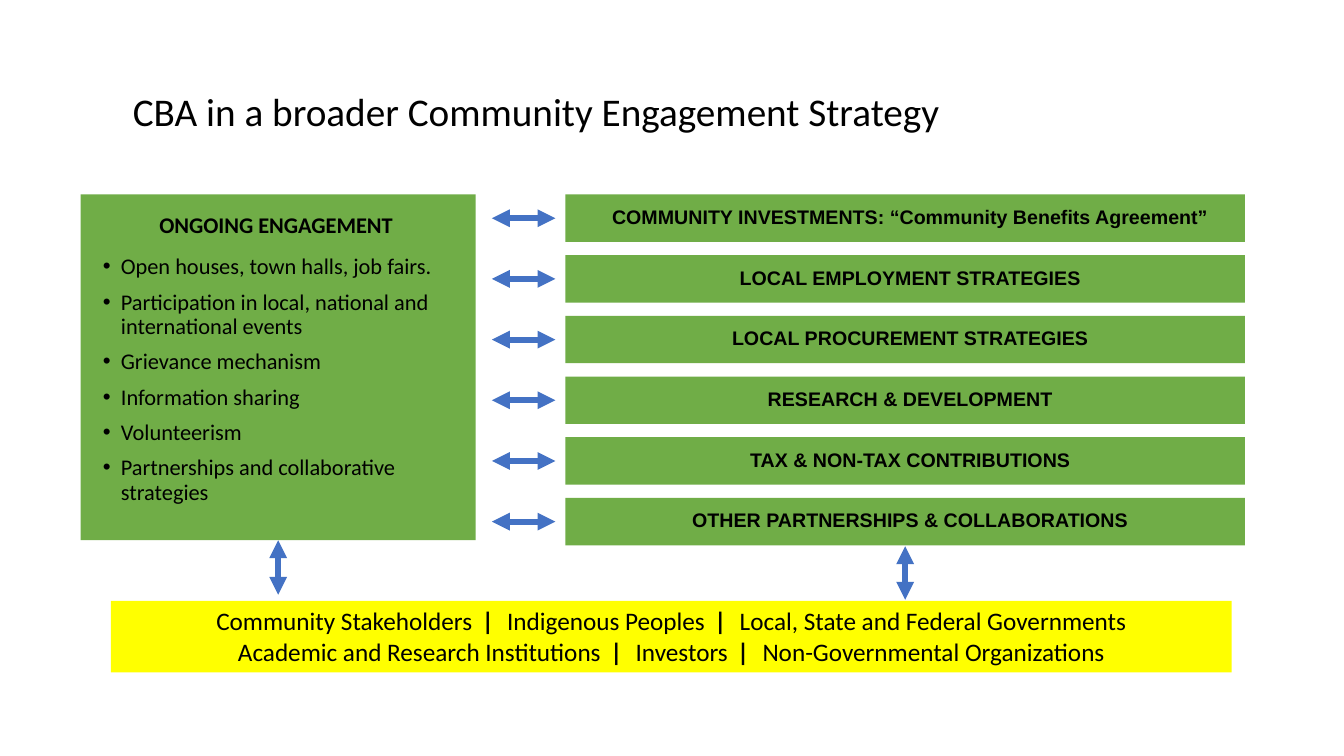
import pptx
import pptx.util
import pptx.dml.color
import pptx.enum.shapes
import pptx.enum.text
import pptx.oxml.ns
from lxml import etree

Pt = pptx.util.Pt
Inches = pptx.util.Inches
RGBColor = pptx.dml.color.RGBColor
ALIGN = pptx.enum.text.PP_ALIGN
ANCHOR = pptx.enum.text.MSO_ANCHOR
qn = pptx.oxml.ns.qn

BLACK = RGBColor(0x00, 0x00, 0x00)
GREEN = RGBColor(0x70, 0xAD, 0x47)
YELLOW = RGBColor(0xFF, 0xFF, 0x00)
BLUE = RGBColor(0x44, 0x72, 0xC4)

SLIDE_WIDTH, SLIDE_HEIGHT = Inches(13.33), Inches(7.5)
COLUMN, ROW = SLIDE_WIDTH / 160, SLIDE_HEIGHT / 90

TITLE_BOX = (14.64, 9.48, 125.28, 8.16)
ENGAGEMENT_BOX = (9.6, 23.16, 47.04, 41.16)
STRATEGIES_BOX = (67.32, 23.16, 80.88, 41.76)
EXCHANGE_BOX = (58.56, 23.16, 7.56, 41.76)
STAKEHOLDERS_BOX = (13.2, 71.52, 133.44, 8.52)
BAR_HEIGHT = 5.64

ACTIVITIES = [
    "Open houses, town halls, job fairs.",
    "Participation in local, national and international events",
    "Grievance mechanism",
    "Information sharing",
    "Volunteerism",
    "Partnerships and collaborative strategies",
]
STRATEGIES = [
    "COMMUNITY INVESTMENTS: “Community Benefits Agreement”",
    "LOCAL EMPLOYMENT STRATEGIES",
    "LOCAL PROCUREMENT STRATEGIES",
    "RESEARCH & DEVELOPMENT",
    "TAX & NON-TAX CONTRIBUTIONS",
    "OTHER PARTNERSHIPS & COLLABORATIONS",
]
STAKEHOLDERS = [
    ["Community Stakeholders", "Indigenous Peoples", "Local, State and Federal Governments"],
    ["Academic and Research Institutions", "Investors", "Non-Governmental Organizations"],
]


def apply(target, formats):
    for name, value in formats.items():
        setattr(target, name, value)


def on_slide(box):
    left, top, width, height = box
    return [round(n) for n in (left * COLUMN, top * ROW, width * COLUMN, height * ROW)]


def set_font(font, size, name="Calibri", bold=False):
    apply(font, {"size": Pt(size), "name": name, "bold": bold})
    font.color.rgb = BLACK


def set_indent(paragraph, margin, first_line):
    properties = paragraph._p.get_or_add_pPr()
    properties.set("marL", str(Inches(margin)))
    properties.set("indent", str(Inches(first_line)))
    return properties


def add_panel(slide, box, colour, frame_formats):
    panel = slide.shapes.add_shape(pptx.enum.shapes.MSO_SHAPE.RECTANGLE, *on_slide(box))
    panel.shadow.inherit = False
    panel.fill.solid()
    panel.fill.fore_color.rgb = colour
    panel.line.fill.background()
    apply(panel.text_frame, {"word_wrap": True, **frame_formats})
    return panel.text_frame


def add_double_arrow(slide, start, end):
    (x1, y1), (x2, y2) = start, end
    arrow = slide.shapes.add_connector(
        pptx.enum.shapes.MSO_CONNECTOR.STRAIGHT,
        round(x1 * COLUMN), round(y1 * ROW), round(x2 * COLUMN), round(y2 * ROW))
    arrow.line.color.rgb = BLUE
    arrow.line.width = Pt(4.25)
    outline = arrow.line._get_or_add_ln()
    for tip in ("a:headEnd", "a:tailEnd"):
        etree.SubElement(outline, qn(tip)).set("type", "triangle")
    etree.SubElement(arrow._element.spPr, qn("a:effectLst"))


def add_title(slide, box):
    frame = slide.shapes.add_textbox(*on_slide(box)).text_frame
    apply(frame, {"word_wrap": True, "vertical_anchor": ANCHOR.MIDDLE})
    title = frame.paragraphs[0]
    title.text = "CBA in a broader Community Engagement Strategy"
    title.line_spacing = 0.9
    set_font(title.font, 28)


def add_engagement(slide, box):
    frame = add_panel(slide, box, GREEN, {
        "vertical_anchor": ANCHOR.TOP, "margin_left": 0, "margin_top": Inches(0.2),
        "margin_right": Inches(0.04), "margin_bottom": 0})
    heading = frame.paragraphs[0]
    apply(heading, {"text": "ONGOING ENGAGEMENT", "alignment": ALIGN.CENTER, "line_spacing": 0.9})
    set_font(heading.font, 16, bold=True)
    for index, activity in enumerate(ACTIVITIES):
        item = frame.add_paragraph()
        apply(item, {"text": activity, "alignment": ALIGN.LEFT, "line_spacing": 0.9,
                     "space_before": Pt(8 if index else 12)})
        properties = set_indent(item, 0.4, -0.18)
        etree.SubElement(properties, qn("a:buFont")).set("typeface", "Arial")
        etree.SubElement(properties, qn("a:buChar")).set("char", "•")
        set_font(item.font, 16)


def add_strategies(slide, box):
    left, top, width, height = box
    pitch = (height - BAR_HEIGHT) / (len(STRATEGIES) - 1)
    for index, strategy in enumerate(STRATEGIES):
        frame = add_panel(slide, (left, top + index * pitch, width, BAR_HEIGHT), GREEN, {
            "vertical_anchor": ANCHOR.MIDDLE, "margin_left": 0, "margin_top": 0,
            "margin_right": 0, "margin_bottom": 0})
        label = frame.paragraphs[0]
        apply(label, {"text": strategy, "alignment": ALIGN.CENTER, "line_spacing": 0.9})
        set_indent(label, 0.15, -0.05)
        set_font(label.font, 14, "Arial", True)


def add_exchange(slide, box):
    left, top, width, height = box
    pitch = (height - BAR_HEIGHT) / (len(STRATEGIES) - 1)
    for index in range(len(STRATEGIES)):
        middle = top + index * pitch + BAR_HEIGHT / 2
        add_double_arrow(slide, (left, middle), (left + width, middle))


def add_stakeholders(slide, box):
    frame = add_panel(slide, box, YELLOW, {"vertical_anchor": ANCHOR.TOP})
    for index, groups in enumerate(STAKEHOLDERS):
        line = frame.add_paragraph() if index else frame.paragraphs[0]
        line.alignment = ALIGN.CENTER
        for position, group in enumerate(groups):
            if position:
                divider = line.add_run()
                divider.text = " | "
                set_font(divider.font, 18, bold=True)
                divider._r.get_or_add_rPr().set("spc", "270")
            name = line.add_run()
            name.text = group
            set_font(name.font, 18)


def add_stakeholder_links(slide, box):
    top = box[1]
    for x, start, gap in ((33.12, 64.32, 0.72), (107.76, 65.04, 0.12)):
        add_double_arrow(slide, (x, start), (x, top - gap))


def main():
    deck = pptx.Presentation()
    apply(deck, {"slide_width": SLIDE_WIDTH, "slide_height": SLIDE_HEIGHT})
    slide = deck.slides.add_slide(deck.slide_layouts[6])
    add_title(slide, TITLE_BOX)
    add_engagement(slide, ENGAGEMENT_BOX)
    add_strategies(slide, STRATEGIES_BOX)
    add_stakeholders(slide, STAKEHOLDERS_BOX)
    add_exchange(slide, EXCHANGE_BOX)
    add_stakeholder_links(slide, STAKEHOLDERS_BOX)
    deck.save("out.pptx")


if __name__ == "__main__":
    main()
